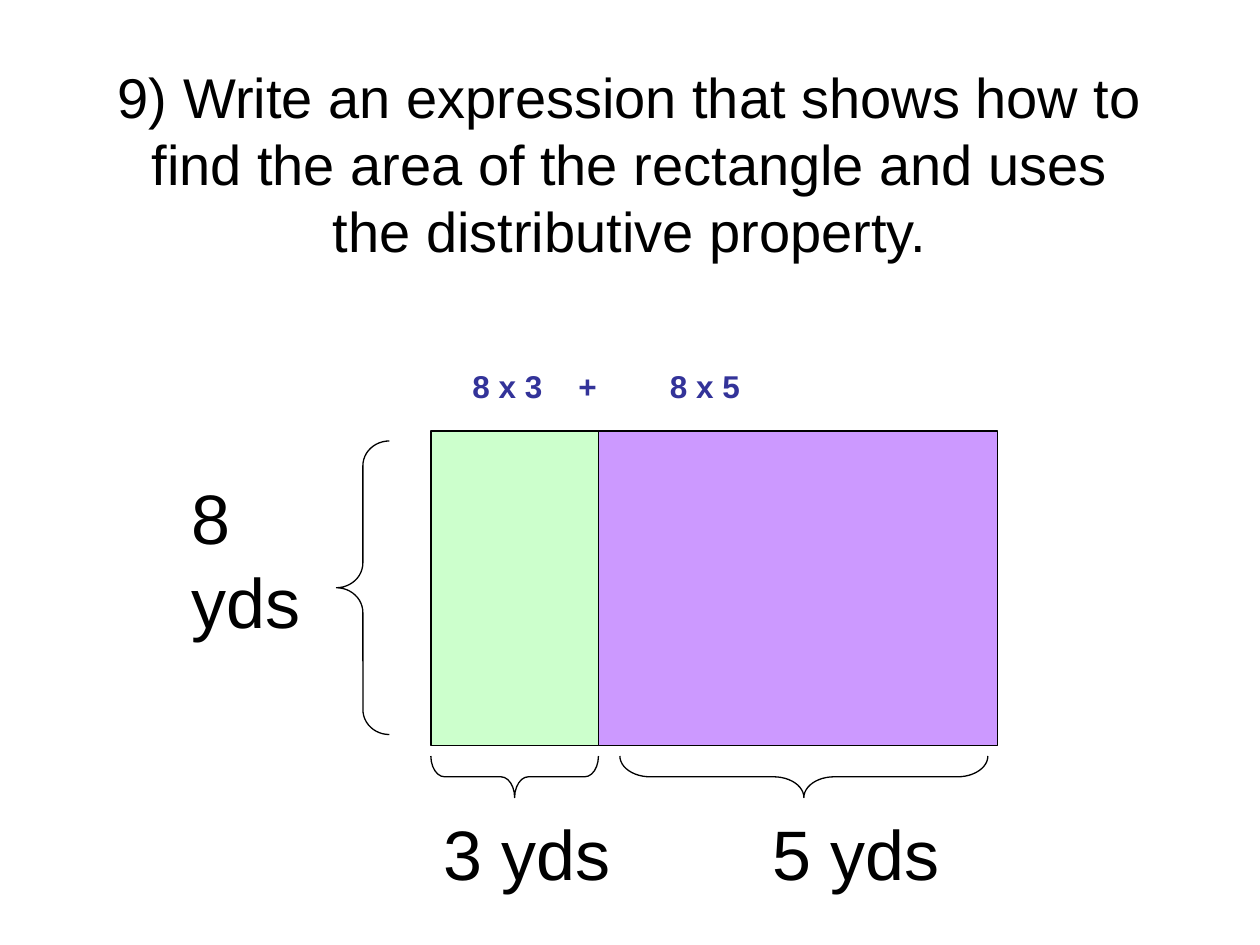
from pptx import Presentation
from pptx.dml.color import RGBColor
from pptx.enum.shapes import MSO_SHAPE as Shape
from pptx.enum.text import MSO_ANCHOR as Anchor, PP_ALIGN as Align
from pptx.oxml.ns import qn
from pptx.util import Inches, Pt
from lxml import etree


def color(value):
    return RGBColor.from_string(value)


class AreaSlide:
    font = "Arial"
    ink = "000000"
    accent = "333399"
    label_size = 40
    line_width = 0.75

    def __init__(self, presentation):
        self.slide = presentation.slides.add_slide(presentation.slide_layouts[6])

    def text(self, text, left, top, width, height, size=label_size, ink=ink,
             bold=False, align=Align.LEFT, anchor=Anchor.TOP,
             inset_left=0.1, inset_right=0.1, inset_top=0.1):
        box = self.slide.shapes.add_textbox(
            Inches(left), Inches(top), Inches(width), Inches(height))
        frame = box.text_frame
        frame.word_wrap = True
        frame.vertical_anchor = anchor
        frame.margin_left = Inches(inset_left)
        frame.margin_right = Inches(inset_right)
        frame.margin_top = Inches(inset_top)
        paragraph = frame.paragraphs[0]
        paragraph.text = text
        paragraph.alignment = align
        font = paragraph.font
        font.name, font.size, font.bold = self.font, Pt(size), bold
        font.color.rgb = color(ink)
        return paragraph

    def product(self, text, left, width, **options):
        return self.text(text, left, 2.83, width, 0.5, size=18, ink=self.accent,
                         bold=True, inset_top=0.08, **options)

    def shape(self, kind, left, top, width, height, fill=None):
        shape = self.slide.shapes.add_shape(
            kind, Inches(left), Inches(top), Inches(width), Inches(height))
        shape.shadow.inherit = False
        if fill:
            shape.fill.solid()
            shape.fill.fore_color.rgb = color(fill)
        else:
            shape.fill.background()
        shape.line.color.rgb = color(self.ink)
        shape.line.width = Pt(self.line_width)
        return shape

    def brace(self, left, top, width, height, curve, rotation=0):
        brace = self.shape(Shape.LEFT_BRACE, left, top, width, height)
        brace.adjustments[0] = curve
        brace.rotation = rotation

    def brace_below(self, left, top, length, depth, curve):
        """Place a brace that opens upward, given its visible bounds."""
        self.brace(left + (length - depth) / 2, top - (length - depth) / 2,
                   depth, length, curve, rotation=270)


def add_tab_stop(paragraph, position):
    properties = paragraph._p.get_or_add_pPr()
    stops = etree.Element(qn("a:tabLst"))
    etree.SubElement(stops, qn("a:tab"), pos=str(Inches(position)), algn="l")
    defaults = properties.find(qn("a:defRPr"))
    if defaults is None:
        properties.append(stops)
    else:
        defaults.addprevious(stops)


def main():
    presentation = Presentation()
    presentation.slide_width = Inches(10)
    presentation.slide_height = Inches(7.5)
    page = AreaSlide(presentation)

    page.text("9) Write an expression that shows how to find the area of the "
              "rectangle and uses the distributive property.",
              0.75, 0.67, 8.5, 1.25, size=32, align=Align.CENTER,
              anchor=Anchor.MIDDLE, inset_top=0.05)

    left, top, height = 3.42, 3.42, 2.5
    for width, fill in ((1.33, "CCFFCC"), (3.17, "CC99FF")):
        page.shape(Shape.RECTANGLE, left, top, width, height, fill)
        left += width

    page.text("8 yds", 1.42, 3.67, 1.25, 1.43)
    page.text("3 yds", 3.42, 6.33, 1.67, 0.77)
    page.text("5 yds", 5.58, 6.33, 3.08, 0.77, inset_left=0.55)

    page.brace(2.67, 3.5, 0.42, 2.33, curve=0.47)
    page.brace_below(4.92, 6, 2.92, 0.33, curve=0.73)
    page.brace_below(3.42, 6, 1.33, 0.33, curve=0.33)

    first_product = page.product("8 x 3\t+", 3.5, 1.5, inset_left=0.25)
    add_tab_stop(first_product, 0.84)
    page.product("8 x 5", 4.67, 1.92, align=Align.CENTER, inset_right=0.17)

    presentation.save("out.pptx")


if __name__ == "__main__":
    main()
